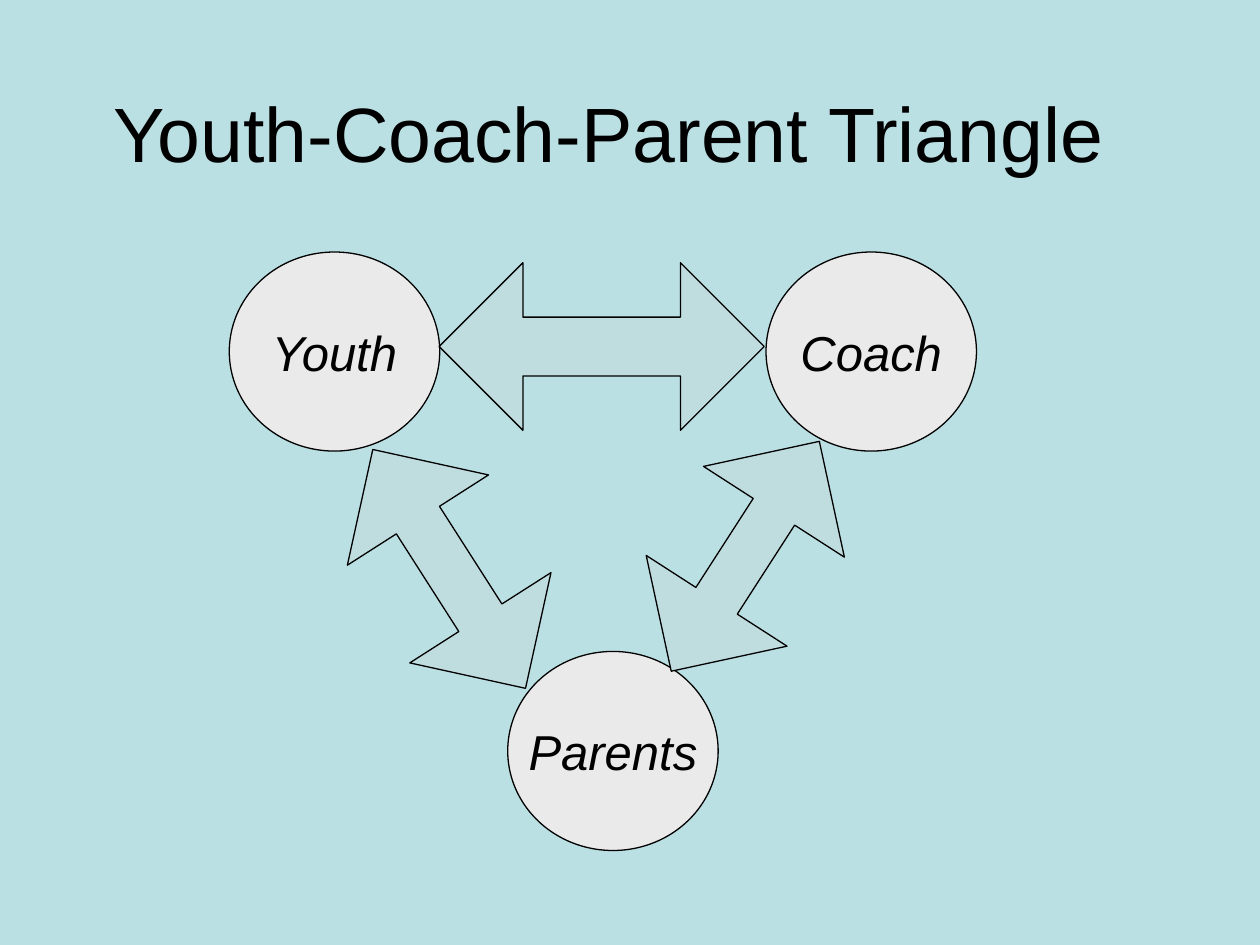
from pptx import Presentation
from pptx.dml.color import RGBColor
from pptx.enum.shapes import MSO_SHAPE as Shape
from pptx.enum.text import MSO_ANCHOR as Anchor, PP_ALIGN as Align
from pptx.util import Inches, Pt

BACKGROUND = RGBColor(0xBB, 0xE0, 0xE3)
CIRCLE_FILL = RGBColor(0xEA, 0xEA, 0xEA)
ARROW_FILL = RGBColor(0xBF, 0xDC, 0xDF)
BLACK = RGBColor(0, 0, 0)


def add_outlined(page, kind, left, top, width, height, fill):
    shape = page.shapes.add_shape(
        kind, Inches(left), Inches(top), Inches(width), Inches(height))
    shape.shadow.inherit = False
    shape.fill.solid()
    shape.fill.fore_color.rgb = fill
    shape.line.color.rgb = BLACK
    shape.line.width = Pt(0.75)
    return shape


def write_centred(box, text, size, wrap, italic):
    frame = box.text_frame
    frame.word_wrap = wrap
    frame.vertical_anchor = Anchor.MIDDLE
    para = frame.paragraphs[0]
    para.alignment = Align.CENTER
    span = para.add_run()
    span.text = text
    span.font.name = "Arial"
    span.font.size = Pt(size)
    span.font.italic = italic
    span.font.color.rgb = BLACK


deck = Presentation()
deck.slide_width = Inches(10)
deck.slide_height = Inches(7.5)
page = deck.slides.add_slide(deck.slide_layouts[6])
page.background.fill.solid()
page.background.fill.fore_color.rgb = BACKGROUND

# Title
title = page.shapes.add_textbox(
    Inches(0.5), Inches(0.17), Inches(8.67), Inches(1.75))
write_centred(title, "Youth-Coach-Parent Triangle", 44, True, False)

# Corners of the triangle
for name, left, top in [("Youth", 1.82, 2), ("Coach", 6.08, 2),
                        ("Parents", 4.03, 5.17)]:
    circle = add_outlined(page, Shape.OVAL, left, top, 1.67, 1.58, CIRCLE_FILL)
    write_centred(circle, name, 28, False, True)

# Two-way arrows: left, top, height, rotation, head length
for left, top, height, rotation, head in [
    (2.9, 3.39, 2.25, 327.4, 0.305),   # Youth and Parents
    (5.25, 3.33, 2.17, 32.8, 0.294),   # Coach and Parents
    (4.11, 1.46, 2.58, 270, 0.351),    # Youth and Coach
]:
    arrow = add_outlined(
        page, Shape.UP_DOWN_ARROW, left, top, 1.33, height, ARROW_FILL)
    arrow.rotation = rotation
    arrow.adjustments[0] = 0.512
    arrow.adjustments[1] = head

deck.save("out.pptx")
